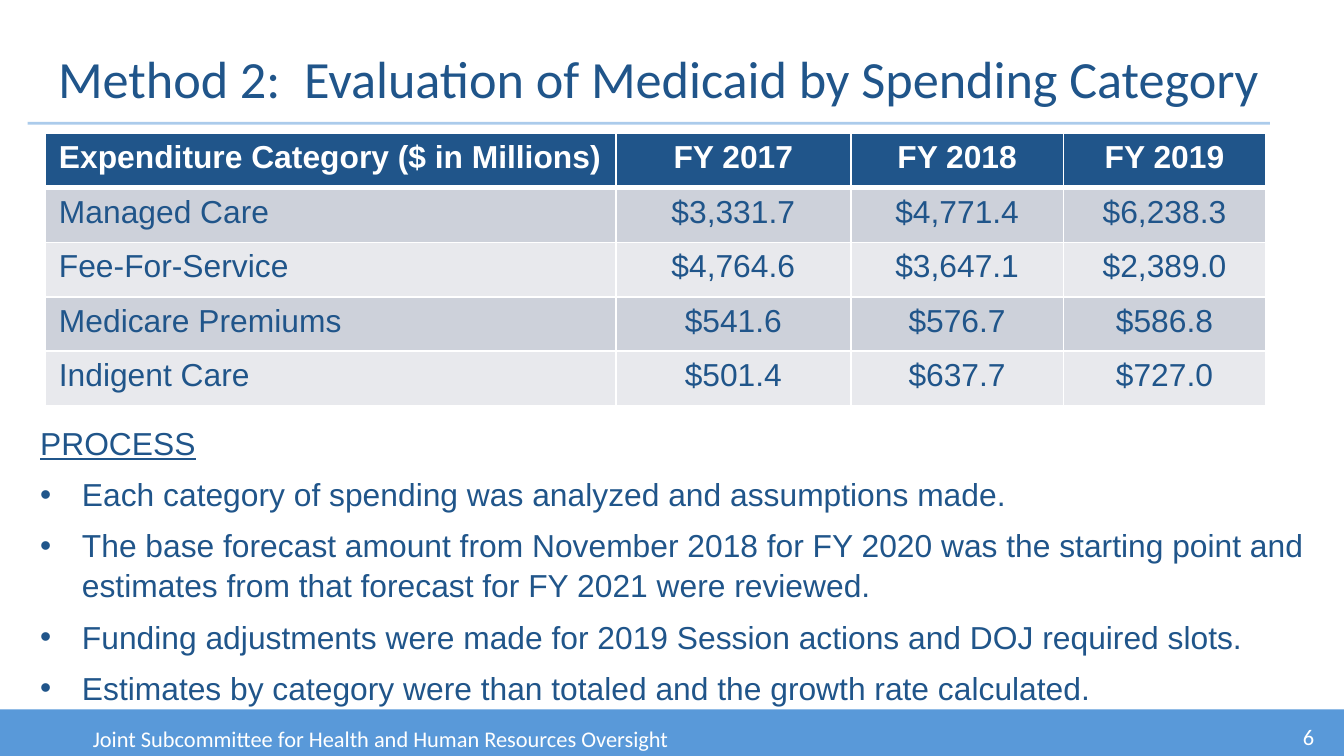
from dataclasses import dataclass

from lxml.etree import SubElement
from pptx import Presentation
from pptx.dml.color import RGBColor
from pptx.enum.shapes import MSO_CONNECTOR, MSO_SHAPE
from pptx.enum.text import MSO_ANCHOR, PP_ALIGN
from pptx.oxml.ns import qn
from pptx.util import Cm, Pt


@dataclass(frozen=True)
class Theme:
    navy: RGBColor = RGBColor(0x20, 0x55, 0x8A)
    blue: RGBColor = RGBColor(0x59, 0x99, 0xD9)
    white: RGBColor = RGBColor(0xFF, 0xFF, 0xFF)
    bands: tuple = (RGBColor(0xCD, 0xD1, 0xDA), RGBColor(0xE8, 0xE9, 0xED))
    heading_font: str = "Calibri"
    body_font: str = "Arial"
    title_size: int = 28
    body_size: int = 17
    footer_size: int = 12


@dataclass(frozen=True)
class Box:
    left: float
    top: float
    width: float
    height: float

    def lengths(self) -> tuple:
        return Cm(self.left), Cm(self.top), Cm(self.width), Cm(self.height)


@dataclass(frozen=True)
class Label:
    text: str
    box: Box
    size: int
    color: RGBColor
    align: PP_ALIGN = PP_ALIGN.LEFT
    anchor: MSO_ANCHOR = MSO_ANCHOR.MIDDLE


THEME = Theme()
SLIDE_WIDTH, SLIDE_HEIGHT = 25.4, 14.29
FOOTER_TOP = 13.41

LABELS = (
    Label("Joint Subcommittee for Health and Human Resources Oversight",
          Box(1.27, 13.59, 11.86, 0.77), THEME.footer_size, THEME.white,
          PP_ALIGN.CENTER, MSO_ANCHOR.TOP),
    Label("6", Box(23.44, 13.54, 1.65, 0.76), THEME.footer_size, THEME.white,
          PP_ALIGN.RIGHT),
    Label("Method 2:  Evaluation of Medicaid by Spending Category",
          Box(0.85, 0.61, 23.93, 1.7), THEME.title_size, THEME.navy),
)

COLUMN_WIDTHS = (10.78, 4.44, 4.02, 3.82)
ROW_HEIGHT = 1.03
SPENDING = (
    ("Expenditure Category ($ in Millions)", "FY 2017", "FY 2018", "FY 2019"),
    ("Managed Care", "$3,331.7", "$4,771.4", "$6,238.3"),
    ("Fee-For-Service", "$4,764.6", "$3,647.1", "$2,389.0"),
    ("Medicare Premiums", "$541.6", "$576.7", "$586.8"),
    ("Indigent Care", "$501.4", "$637.7", "$727.0"),
)

PROCESS_STEPS = (
    "Each category of spending was analyzed and assumptions made.",
    "The base forecast amount from November 2018 for FY 2020 was the starting "
    "point and estimates from that forecast for FY 2021 were reviewed.",
    "Funding adjustments were made for 2019 Session actions and DOJ required slots.",
    "Estimates by category were than totaled and the growth rate calculated.",
)


def style_font(paragraph, name: str, size: int, color: RGBColor) -> None:
    paragraph.font.name = name
    paragraph.font.size = Pt(size)
    paragraph.font.color.rgb = color


def add_label(slide, label: Label) -> None:
    frame = slide.shapes.add_textbox(*label.box.lengths()).text_frame
    frame.word_wrap = True
    frame.vertical_anchor = label.anchor
    paragraph = frame.paragraphs[0]
    paragraph.text = label.text
    paragraph.alignment = label.align
    style_font(paragraph, THEME.heading_font, label.size, label.color)


def add_footer_band(slide) -> None:
    box = Box(0, FOOTER_TOP, SLIDE_WIDTH, SLIDE_HEIGHT - FOOTER_TOP)
    band = slide.shapes.add_shape(MSO_SHAPE.RECTANGLE, *box.lengths())
    band.shadow.inherit = False
    band.fill.solid()
    band.fill.fore_color.rgb = THEME.blue
    band.line.fill.background()


def add_title_rule(slide) -> None:
    rule = slide.shapes.add_connector(
        MSO_CONNECTOR.STRAIGHT, Cm(0.52), Cm(2.33), Cm(24), Cm(2.33))
    rule.line.color.rgb = THEME.blue
    rule.line.width = Pt(1.5)
    properties = rule.element.spPr
    color = next(properties.iter(qn("a:srgbClr")))
    SubElement(color, qn("a:alpha"), val="50000")
    SubElement(properties, qn("a:effectLst"))


def set_border(cell, side: str, points: float) -> None:
    properties = cell._tc.get_or_add_tcPr()
    line = SubElement(properties, qn(f"a:{side}"), w=str(Pt(points)))
    fill = SubElement(line, qn("a:solidFill"))
    SubElement(fill, qn("a:srgbClr"), val=str(THEME.white))


def style_cell(cell, text: str, row: int, column: int) -> None:
    header = row == 0
    # Borders come before the fill in the cell properties
    for side in ("lnL", "lnR", "lnT", "lnB"):
        thick = (header and side == "lnB") or (row == 1 and side == "lnT")
        set_border(cell, side, 3 if thick else 1)
    cell.fill.solid()
    cell.fill.fore_color.rgb = THEME.navy if header else THEME.bands[(row - 1) % 2]
    paragraph = cell.text_frame.paragraphs[0]
    paragraph.text = text
    paragraph.alignment = PP_ALIGN.CENTER if column else PP_ALIGN.LEFT
    style_font(paragraph, THEME.body_font, THEME.body_size,
               THEME.white if header else THEME.navy)
    paragraph.font.bold = header


def add_spending_table(slide) -> None:
    box = Box(0.86, 2.52, sum(COLUMN_WIDTHS), ROW_HEIGHT * len(SPENDING))
    table = slide.shapes.add_table(
        len(SPENDING), len(COLUMN_WIDTHS), *box.lengths()).table
    for column, width in zip(table.columns, COLUMN_WIDTHS):
        column.width = Cm(width)
    for row_index, values in enumerate(SPENDING):
        table.rows[row_index].height = Cm(ROW_HEIGHT)
        for column_index, value in enumerate(values):
            style_cell(table.cell(row_index, column_index), value,
                       row_index, column_index)


def add_bullet(paragraph) -> None:
    properties = paragraph._p.get_or_add_pPr()
    properties.set("marL", str(Cm(0.79)))
    properties.set("indent", str(-Cm(0.79)))
    SubElement(properties, qn("a:buFont"), typeface=THEME.body_font)
    SubElement(properties, qn("a:buChar"), char="•")


def add_process(slide) -> None:
    box = Box(0.51, 7.85, 24.61, 6.4)
    frame = slide.shapes.add_textbox(*box.lengths()).text_frame
    frame.word_wrap = True
    for index, text in enumerate(("PROCESS", *PROCESS_STEPS)):
        paragraph = frame.add_paragraph() if index else frame.paragraphs[0]
        paragraph.text = text
        paragraph.space_before = Pt(6)
        paragraph.line_spacing = 1.05
        if index:
            add_bullet(paragraph)
        style_font(paragraph, THEME.body_font, THEME.body_size, THEME.navy)
        # Underline is set on the run so that the heading shows it
        paragraph.runs[0].font.underline = index == 0


def main() -> None:
    presentation = Presentation()
    presentation.slide_width = Cm(SLIDE_WIDTH)
    presentation.slide_height = Cm(SLIDE_HEIGHT)
    slide = presentation.slides.add_slide(presentation.slide_layouts[6])

    # Frame of the page
    add_footer_band(slide)
    add_title_rule(slide)
    for label in LABELS:
        add_label(slide, label)

    # Content
    add_spending_table(slide)
    add_process(slide)
    presentation.save("out.pptx")


if __name__ == "__main__":
    main()
